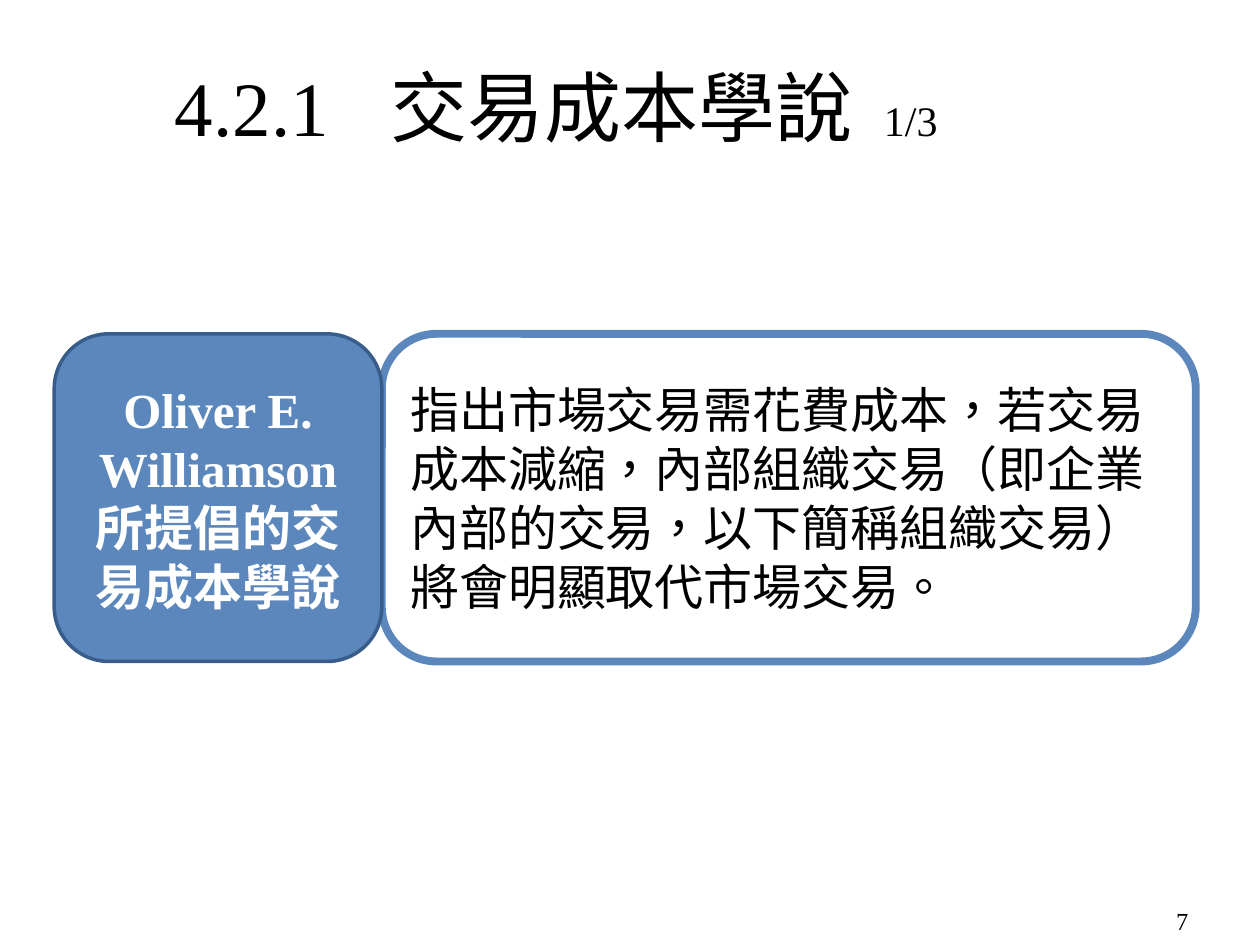
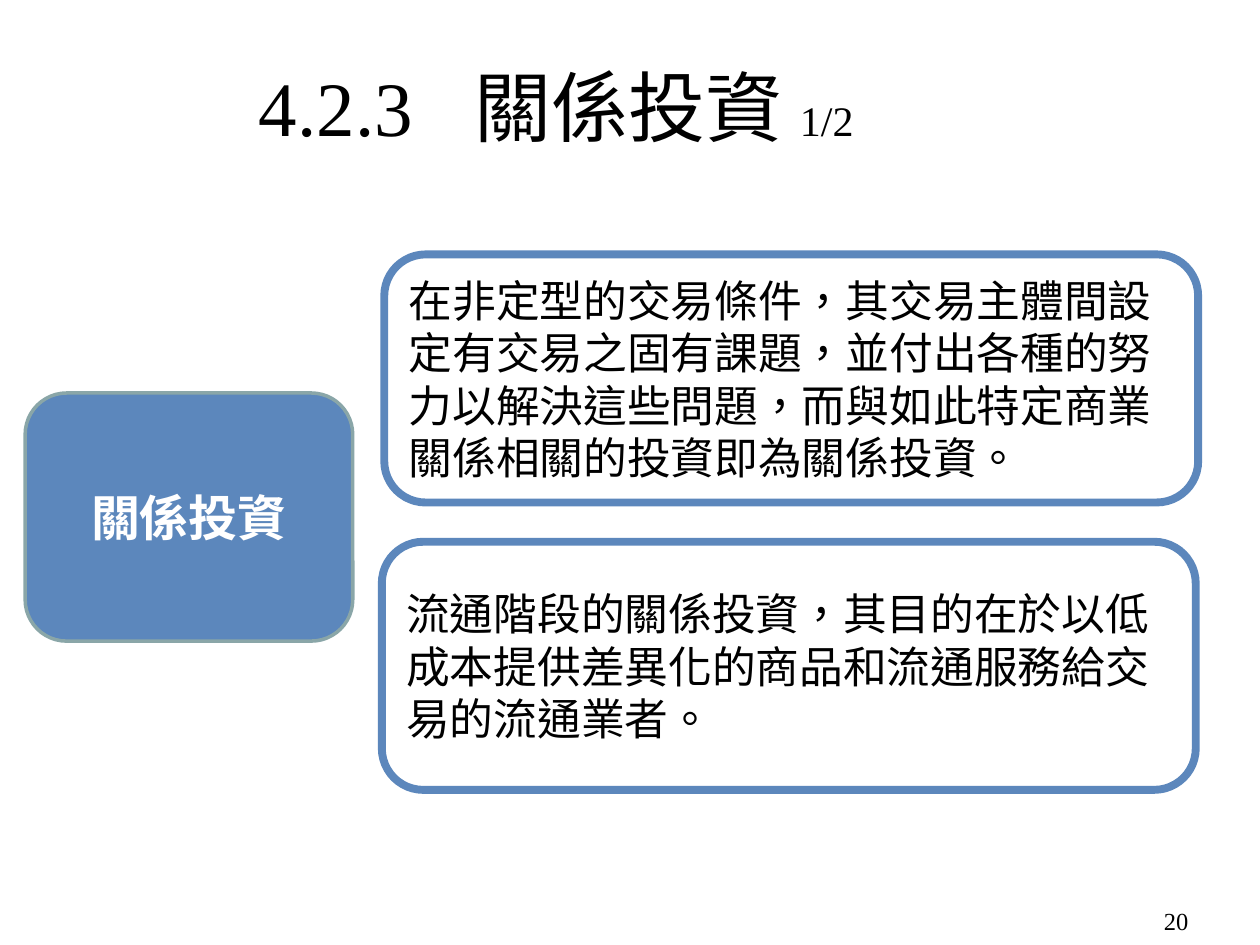
from dataclasses import dataclass
from pptx import Presentation
from pptx.dml.color import RGBColor
from pptx.enum.lang import MSO_LANGUAGE_ID as Lang
from pptx.enum.shapes import MSO_SHAPE as Preset
from pptx.enum.text import MSO_ANCHOR as Anchor, PP_ALIGN as Align
from pptx.oxml import parse_xml
from pptx.oxml.ns import nsdecls
from pptx.util import Pt


@dataclass(frozen=True)
class Theme:
    ink: str = "000000"
    paper: str = "FFFFFF"
    blue: str = "5C87BC"
    navy: str = "385D8A"
    sage: str = "8AA6A8"
    latin: str = "Times New Roman"
    chinese: str = "Noto Sans CJK SC"
    title_size: int = 44
    label_size: int = 28
    part_size: int = 24
    number_size: int = 14
    card_line: float = 4.5
    label_line: float = 2
    corner: float = 0.167


class Deck:
    label_width = 187.2
    card_width = 465.1

    def __init__(self, theme):
        self.theme = theme
        self.show = Presentation()
        self.show.slide_width, self.show.slide_height = Pt(720), Pt(540)
        self.slide = None

    def style(self, run, size, color, latin=None, bold=False, spread=0):
        font = run.font
        font.size, font.bold = Pt(size), bold
        font.name = latin or self.theme.latin
        font.color.rgb = RGBColor.from_string(color)
        font.language_id = Lang.TRADITIONAL_CHINESE
        properties = run._r.get_or_add_rPr()
        if spread:
            properties.set("spc", str(spread * 100))
        east_asian = parse_xml(f'<a:ea {nsdecls("a")} typeface="{self.theme.chinese}"/>')
        properties.find("{*}latin").addnext(east_asian)

    def text_line(self, box, align, anchor):
        frame = self.slide.shapes.add_textbox(*map(Pt, box)).text_frame
        frame.word_wrap, frame.vertical_anchor = True, anchor
        line = frame.paragraphs[0]
        line.alignment = align
        return line

    def page(self, number, section, topic, part, part_gap):
        theme = self.theme
        self.slide = self.show.slides.add_slide(self.show.slide_layouts[6])
        footer = self.text_line((614.9, 514.1, 71.3, 22.3), Align.RIGHT, Anchor.TOP)
        footer.text = str(number)
        self.style(footer.runs[0], theme.number_size, theme.ink)

        title = self.text_line((14.4, 25.9, 607, 68.4), Align.CENTER, Anchor.MIDDLE)
        pieces = [
            (section, theme.title_size, 0),
            (" ", theme.title_size, 24),
            (topic, theme.title_size, 0),
            (" ", theme.title_size, part_gap),
            (part, theme.part_size, 0),
        ]
        for words, size, spread in pieces:
            run = title.add_run()
            run.text = words
            self.style(run, size, theme.ink, spread=spread)

    def rounded(self, box, words, fill, line, line_width, align, **style):
        shape = self.slide.shapes.add_shape(Preset.ROUNDED_RECTANGLE, *map(Pt, box))
        shape.shadow.inherit = False
        shape.adjustments[0] = self.theme.corner
        shape.fill.solid()
        shape.fill.fore_color.rgb = RGBColor.from_string(fill)
        shape.line.color.rgb = RGBColor.from_string(line)
        shape.line.width = Pt(line_width)
        frame = shape.text_frame
        frame.text = words
        frame.word_wrap, frame.vertical_anchor = True, Anchor.MIDDLE
        frame.paragraphs[0].alignment = align
        self.style(frame.paragraphs[0].runs[0], **style)

    def card(self, left, top, height, words, size):
        theme = self.theme
        self.rounded((left, top, self.card_width, height), words, theme.paper, theme.blue,
                     theme.card_line, Align.LEFT, size=size, color=theme.ink,
                     latin=theme.chinese)

    def label(self, left, top, height, words, line):
        theme = self.theme
        self.rounded((left, top, self.label_width, height), words, theme.blue, line,
                     theme.label_line, Align.CENTER, size=theme.label_size,
                     color=theme.paper, bold=True)


def main():
    theme = Theme()
    deck = Deck(theme)

    deck.page(7, "4.2.1", "交易成本學說", "1/3", part_gap=8)
    theory_top, theory_height = 190.8, 187.2
    deck.card(218.2, theory_top, theory_height,
              "指出市場交易需花費成本，若交易成本減縮，內部組織交易"
              "（即企業內部的交易，以下簡稱組織交易）將會明顯取代市場交易。", 28)
    deck.label(31, theory_top, theory_height,
               "Oliver E. Williamson所提倡的交易成本學說", theme.navy)

    deck.page(20, "4.2.3", "關係投資", "1/2", part_gap=0)
    investment_height = 141.8
    deck.card(219.6, 145.4, investment_height,
              "在非定型的交易條件，其交易主體間設定有交易之固有課題，並付出各種的努力"
              "以解決這些問題，而與如此特定商業關係相關的投資即為關係投資。", 25)
    deck.card(218.2, 309.6, investment_height,
              "流通階段的關係投資，其目的在於以低成本提供差異化的商品和流通服務"
              "給交易的流通業者。", 25)
    deck.label(14.4, 224.6, investment_height, "關係投資", theme.sage)

    deck.show.save("out.pptx")


if __name__ == "__main__":
    main()
